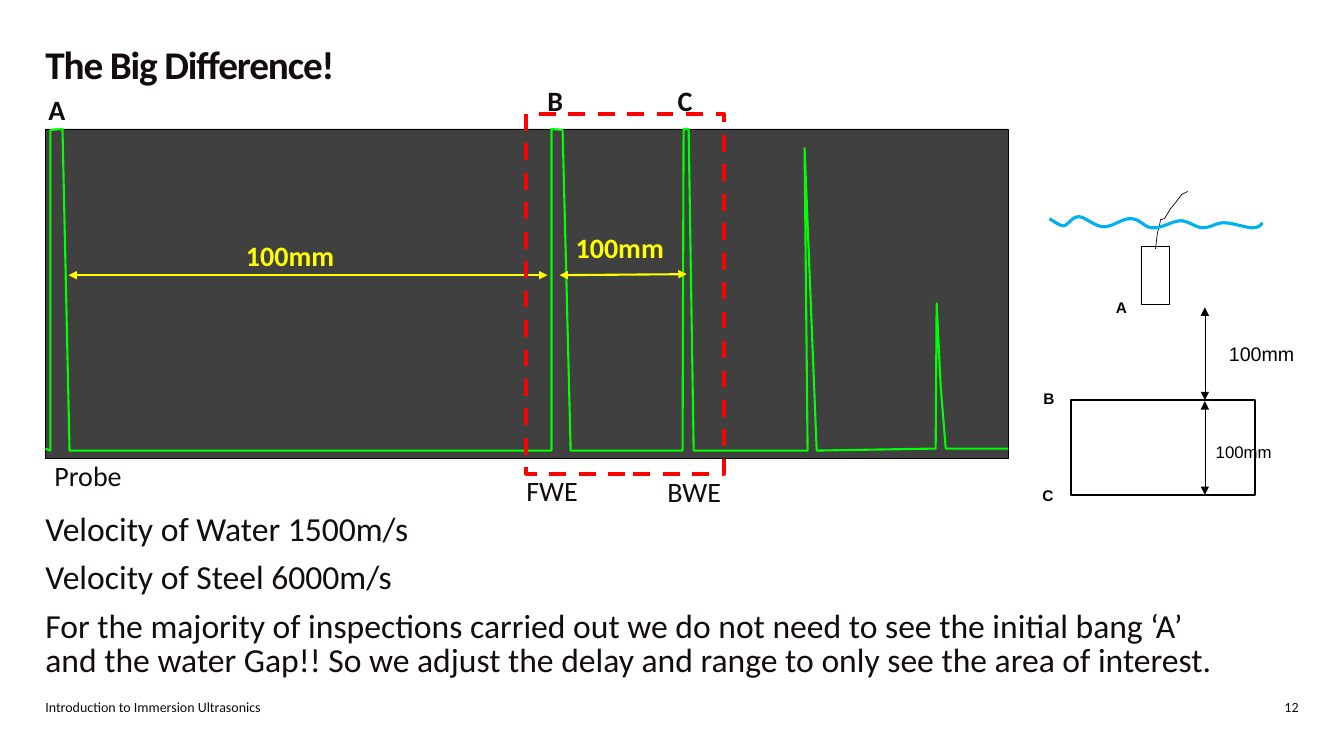
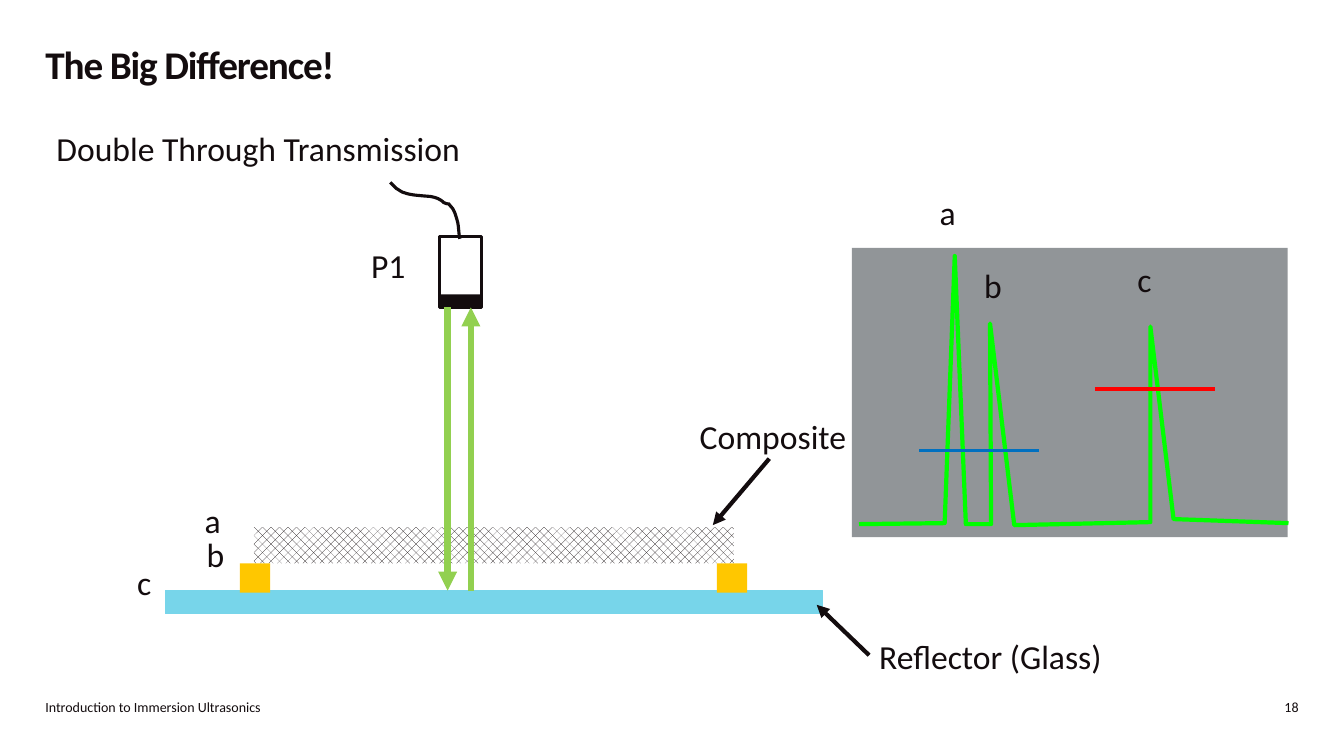
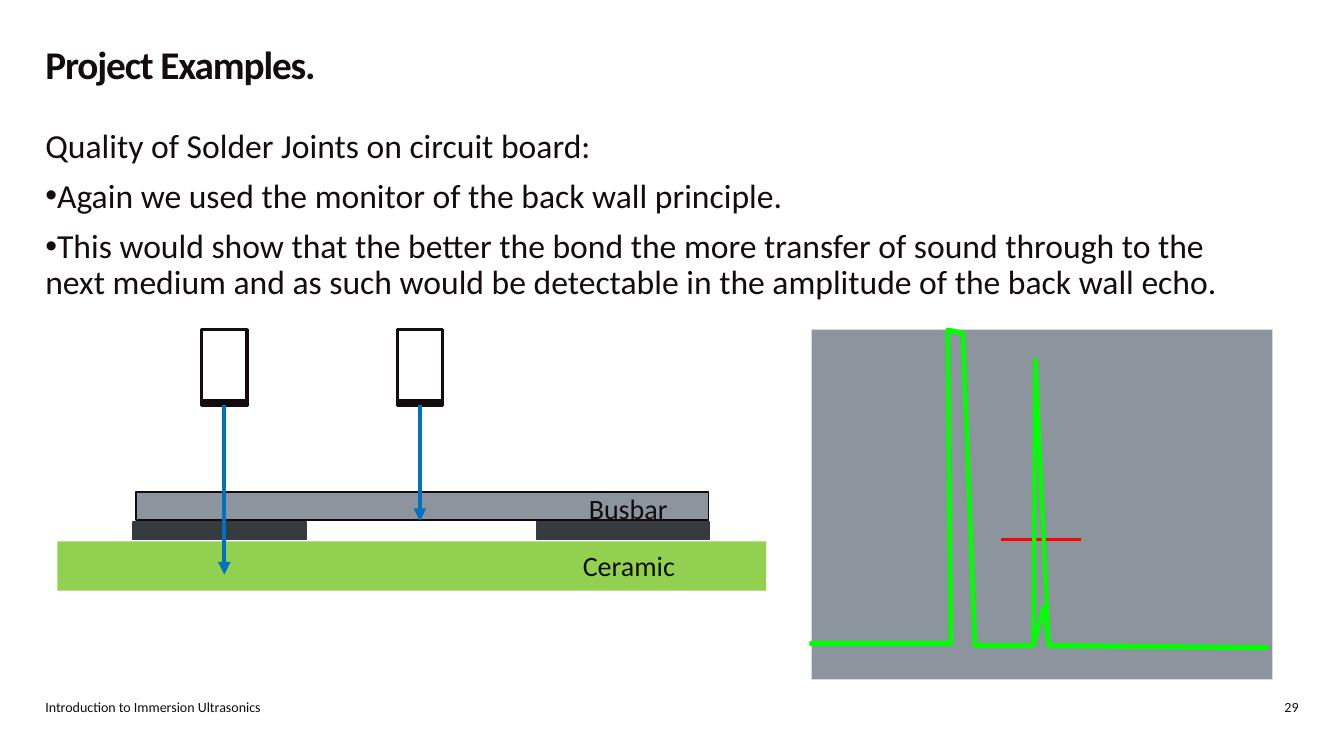
import dataclasses

import pptx
import pptx.dml.color
import pptx.enum.dml
import pptx.enum.shapes
import pptx.enum.text
import pptx.oxml.ns
import pptx.oxml.xmlchemy
import pptx.util

Inches = pptx.util.Inches
Pt = pptx.util.Pt
ALIGN = pptx.enum.text.PP_ALIGN
ANCHOR = pptx.enum.text.MSO_ANCHOR

COLORS = {
    "ink": "130C0E",
    "black": "000000",
    "white": "FFFFFF",
    "screen": "404040",
    "screen_gray": "919598",
    "metal": "8C959D",
    "solder": "353B3F",
    "trace": "00FF00",
    "yellow": "FFFF00",
    "red": "FF0000",
    "blue": "0070C0",
    "water": "00B0F0",
    "glass": "77D5EA",
    "spacer": "FFC700",
    "green": "92D050",
}
FRAME = {"margin_left": 0, "margin_top": 0, "margin_right": 0, "margin_bottom": 0,
         "word_wrap": True, "auto_size": pptx.enum.text.MSO_AUTO_SIZE.NONE,
         "vertical_anchor": ANCHOR.TOP}
TITLE_FONT = {"name": "Calibri", "size": Pt(28), "bold": True}
BODY_FONT = {"name": "Calibri", "size": Pt(24), "bold": False}
LABEL_FONT = {"name": "Calibri", "size": Pt(20), "bold": False}
FOOTER_FONT = {"name": "Calibri", "size": Pt(10), "bold": False}
FOOTER = "Introduction to Immersion Ultrasonics"


def apply(obj, values):
    """Set every attribute in values on obj."""
    for name, value in values.items():
        setattr(obj, name, value)


def rgb(name):
    """Return a named palette colour."""
    return pptx.dml.color.RGBColor.from_string(COLORS[name])


def add_run(p, text, font, color="ink"):
    """Add one formatted run to a paragraph."""
    r = p.add_run()
    r.text = text
    apply(r.font, font)
    r.font.color.rgb = rgb(color)
    return r


def add_child(parent, tag, **attrs):
    """Append a DrawingML element."""
    child = parent.makeelement(pptx.oxml.ns.qn(tag), attrs)
    parent.append(child)


def bezier(start, segments, steps=8):
    """Sample a chain of cubic curves into points."""
    points = [start]
    for c1, c2, end in segments:
        p0 = points[-1]
        for i in range(1, steps + 1):
            t = i / steps
            weights = ((1 - t) ** 3, 3 * t * (1 - t) ** 2, 3 * t * t * (1 - t), t ** 3)
            points.append(tuple(sum(w * q[k] for w, q in zip(weights, (p0, c1, c2, end)))
                                for k in (0, 1)))
    return points


@dataclasses.dataclass
class Region:
    """A part of a slide whose contents are placed from its top left corner."""
    sl: object
    x: float
    y: float

    def at(self, x, y):
        """Convert a local point to slide lengths."""
        return Inches(self.x + x), Inches(self.y + y)

    def sub(self, x, y):
        """Return a region inside this one."""
        return Region(self.sl, self.x + x, self.y + y)

    def finish(self, sp, fill, line, width):
        """Give a shape its fill and outline."""
        sp.shadow.inherit = False
        if fill:
            sp.fill.solid()
            sp.fill.fore_color.rgb = rgb(fill)
        else:
            sp.fill.background()
        if line:
            sp.line.color.rgb = rgb(line)
            sp.line.width = Pt(width)
        else:
            sp.line.fill.background()
        return sp

    def rect(self, x, y, w, h, fill=None, line=None, width=1):
        """Add a rectangle."""
        sp = self.sl.shapes.add_shape(pptx.enum.shapes.MSO_SHAPE.RECTANGLE,
                                      *self.at(x, y), Inches(w), Inches(h))
        return self.finish(sp, fill, line, width)

    def trace(self, points, color, width):
        """Add an open outline through points."""
        start, *rest = [self.at(*point) for point in points]
        fb = self.sl.shapes.build_freeform(*start)
        fb.add_line_segments(rest, close=False)
        return self.finish(fb.convert_to_shape(), None, color, width)

    def line(self, start, end, color, width, ends=()):
        """Add a straight line with triangles at the named ends."""
        cxn = self.sl.shapes.add_connector(pptx.enum.shapes.MSO_CONNECTOR.STRAIGHT,
                                           *self.at(*start), *self.at(*end))
        cxn.line.color.rgb = rgb(color)
        cxn.line.width = Pt(width)
        for tag in ends:
            add_child(cxn.line._get_or_add_ln(), tag, type="triangle")
        add_child(cxn.element.spPr, "a:effectLst")
        return cxn

    def text(self, x, y, w, h, text, font=LABEL_FONT, color="ink",
             frame=FRAME, para=None):
        """Add a one-paragraph text box."""
        tf = self.sl.shapes.add_textbox(*self.at(x, y), Inches(w), Inches(h)).text_frame
        apply(tf, frame)
        apply(tf.paragraphs[0], para or {})
        add_run(tf.paragraphs[0], text, font, color)


ARROW = ("a:tailEnd",)
DOUBLE_ARROW = ("a:headEnd", "a:tailEnd")


def place(sp, x, y, w, h):
    """Move and size a placeholder and reset its text frame."""
    apply(sp, {"left": Inches(x), "top": Inches(y), "width": Inches(w), "height": Inches(h)})
    apply(sp.text_frame, FRAME)


def base_slide(prs, layout, title, number):
    """Add a slide with the shared title, footer and number."""
    sl = prs.slides.add_slide(prs.slide_layouts[layout])
    place(sl.shapes.title, 0.45, 0.49, 11.75, 0.79)
    p = sl.shapes.title.text_frame.paragraphs[0]
    apply(p, {"alignment": ALIGN.LEFT, "line_spacing": 0.8})
    r = add_run(p, title, TITLE_FONT)
    r.font._element.set("spc", "-80")
    page = Region(sl, 0, 0)
    frame = {**FRAME, "vertical_anchor": ANCHOR.MIDDLE}
    page.text(0.45, 6.94, 4.58, 0.15, FOOTER, FOOTER_FONT, frame=frame)
    page.text(12.05, 6.94, 0.83, 0.15, str(number), FOOTER_FONT, frame=frame,
              para={"alignment": ALIGN.RIGHT})
    return page


def body(sl, box, items, spacing):
    """Fill the body placeholder with (text, bulleted) items."""
    sp = sl.placeholders[1]
    place(sp, *box)
    for i, (text, bulleted) in enumerate(items):
        p = sp.text_frame.add_paragraph() if i else sp.text_frame.paragraphs[0]
        pPr = p._p.get_or_add_pPr()
        apply_indent = {"marL": "0", "indent": "0"}
        for name, value in apply_indent.items():
            pPr.set(name, value)
        if bulleted:
            add_child(pPr, "a:buChar", char="•")
        else:
            add_child(pPr, "a:buNone")
        apply(p, {"line_spacing": spacing, "space_before": Pt(10 if i else 0)})
        add_run(p, text, BODY_FONT)


def long_scan(rg):
    """Draw the full time base with its echoes, gaps and labels."""
    rg.rect(0, 0, 9.55, 3.27, "screen", "black", 0.5)
    rg.trace([(0, 3.17), (0.05, 3.19), (0.05, 0.01), (0.17, 0), (0.24, 3.19),
              (5.02, 3.19), (5.02, 0), (5.13, 0.01), (5.21, 3.19), (6.32, 3.19),
              (6.33, 0), (6.38, 0), (6.43, 3.19), (7.56, 3.19), (7.53, 0.19),
              (7.65, 3.19), (8.83, 3.17), (8.84, 1.73), (8.88, 2.56), (8.93, 3.17),
              (9.55, 3.17)], "trace", 1.5)
    for x, y, name in ((0.09, 3.27, "Probe"), (4.77, 3.42, "FWE"), (6.17, 3.43, "BWE")):
        rg.text(x, y, 1.24, 0.35, name)
    bold = {**LABEL_FONT, "bold": True}
    for x, y, name in ((0.03, -0.36, "A"), (4.98, -0.45, "B"), (6.27, -0.45, "C")):
        rg.text(x, y, 0.41, 0.35, name, bold)
    for x, y, start, end in ((1.99, 1.09, (0.23, 1.45), (4.98, 1.45)),
                             (5.26, 1.01, (5.1, 1.45), (6.36, 1.44))):
        rg.text(x, y, 1.24, 0.35, "100mm", bold, "yellow")
        rg.line(start, end, "yellow", 1.5, DOUBLE_ARROW)


def tank(rg):
    """Draw the probe under water above the test block."""
    for top, bottom in ((1.15, 2.07), (2.08, 3.01)):
        rg.line((1.71, top), (1.71, bottom), "black", 0.5, DOUBLE_ARROW)
    rg.rect(0.38, 2.07, 1.83, 0.94, None, "black", 1.5)
    rg.rect(1.08, 0.54, 0.28, 0.58, None, "black", 0.5)
    rg.trace([(1.22, 0.57), (1.24, 0.41), (1.26, 0.34), (1.27, 0.28), (1.31, 0.27),
              (1.37, 0.17), (1.42, 0.11), (1.48, 0.03), (1.54, 0)], "black", 0.5)
    rg.trace(bezier((0.17, 0.27), [
        ((0.22, 0.3), (0.27, 0.34), (0.31, 0.34)),
        ((0.36, 0.33), (0.39, 0.25), (0.46, 0.25)),
        ((0.52, 0.25), (0.62, 0.35), (0.71, 0.35)),
        ((0.8, 0.35), (0.9, 0.26), (0.98, 0.27)),
        ((1.07, 0.27), (1.11, 0.36), (1.19, 0.36)),
        ((1.28, 0.37), (1.39, 0.29), (1.47, 0.29)),
        ((1.55, 0.29), (1.62, 0.36), (1.69, 0.36)),
        ((1.77, 0.36), (1.82, 0.31), (1.9, 0.31)),
        ((1.98, 0.31), (2.12, 0.36), (2.18, 0.36)),
        ((2.24, 0.36), (2.26, 0.34), (2.28, 0.31))]), "water", 2.25)
    frame = {"word_wrap": True}
    for x, y, w, name, size, bold in ((1.85, 1.41, 0.97, "100mm", 14, False),
                                      (1.72, 2.4, 0.97, "100mm", 12, False),
                                      (0.73, 0.98, 0.49, "A", 11, True),
                                      (0.01, 1.88, 0.49, "B", 11, True),
                                      (0, 2.85, 0.49, "C", 11, True)):
        rg.text(x, y, w, 0.4, name, {"name": "Arial", "size": Pt(size), "bold": bold},
                "black", frame, {"line_spacing": 1.15})


def through_setup(rg):
    """Draw the probe, composite, spacers and glass reflector."""
    rg.rect(0.28, 4.05, 6.52, 0.23, "glass", "glass")
    composite = rg.rect(1.16, 3.42, 4.76, 0.36)
    composite.fill.patterned()
    composite.fill.pattern = pptx.enum.dml.MSO_PATTERN.WEAVE
    composite.fill.fore_color.rgb = rgb("ink")
    composite.fill.back_color.rgb = rgb("white")
    for x in (1.02, 5.75):
        rg.rect(x, 3.78, 0.3, 0.29, "spacer")
    rg.rect(3, 0.54, 0.42, 0.7, None, "ink", 2.25)
    rg.trace(bezier((3.2, 0.56), [
        ((3.19, 0.51), (3.19, 0.45), (3.18, 0.4)),
        ((3.17, 0.36), (3.16, 0.33), (3.15, 0.3)),
        ((3.14, 0.28), (3.14, 0.28), (3.13, 0.26)),
        ((3.05, 0.17), (3.13, 0.24), (3.04, 0.2)),
        ((3.03, 0.19), (3.02, 0.18), (3, 0.17)),
        ((2.97, 0.15), (2.91, 0.14), (2.91, 0.14)),
        ((2.8, 0.13), (2.75, 0.13), (2.67, 0.11)),
        ((2.65, 0.1), (2.63, 0.1), (2.62, 0.09)),
        ((2.6, 0.08), (2.59, 0.07), (2.57, 0.06)),
        ((2.55, 0.04), (2.53, 0.02), (2.51, 0))]), "ink", 2.25)
    rg.rect(3, 1.11, 0.42, 0.12, "ink")
    rg.line((3.08, 1.24), (3.08, 4.05), "green", 4.5, ARROW)
    rg.line((3.31, 4.05), (3.31, 1.24), "green", 4.5, ARROW)
    for x, y, w, name in ((2.32, 0.62, 0.55, "P1"), (0.67, 3.15, 0.55, "a"),
                          (0.69, 3.49, 0.55, "b"), (0, 3.76, 0.55, "c"),
                          (5.58, 2.32, 1.58, "Composite"),
                          (7.36, 4.5, 2.32, "Reflector (Glass)")):
        rg.text(x, y, w, 0.4, name, BODY_FONT)
    rg.line((6.27, 2.74), (5.71, 3.4), "ink", 3, ARROW)
    rg.line((7.26, 4.69), (6.74, 4.19), "ink", 3, ARROW)


def gated_scan(rg):
    """Draw the scan with a red and a blue gate."""
    rg.rect(0, 0, 4.32, 2.87, "screen_gray")
    rg.trace([(0.07, 2.74), (0.92, 2.73), (1.02, 0.08), (1.13, 2.74), (1.38, 2.74),
              (1.37, 0.75), (1.61, 2.75), (2.96, 2.72), (2.96, 0.78), (3.19, 2.69),
              (4.33, 2.73)], "trace", 3)
    for x, y, color in ((2.41, 1.4, "red"), (0.67, 2.01, "blue")):
        rg.line((x, y), (x + 1.19, y), color, 2.75)
    for x, y, name in ((0.87, -0.56, "a"), (1.31, 0.17, "b"), (2.83, 0.11, "c")):
        rg.text(x, y, 0.55, 0.4, name, BODY_FONT)


def joint_probe(rg):
    """Draw a probe and return its tip."""
    rg.rect(0, 0, 0.45, 0.74, "white", "ink", 2.25)
    return rg.rect(0, 0.7, 0.45, 0.05, "ink", "ink", 2.25)


def solder_joint(rg):
    """Draw two probes above the busbar, solder and ceramic."""
    for x in (0.75, 4.75):
        rg.rect(x, 1.91, 1.72, 0.17, "solder", "solder")
    probes = [(x, depth, joint_probe(rg.sub(x, 0))) for x, depth in ((1.43, 2.43), (3.37, 1.9))]
    rg.rect(0.78, 1.61, 5.68, 0.28, "metal", "ink")
    rg.text(5.27, 1.61, 0.86, 0.34, "Busbar")
    rg.rect(0, 2.1, 7.03, 0.49, "green")
    rg.text(5.21, 2.17, 1.42, 0.34, "Ceramic")
    for x, depth, tip in probes:
        middle = x + 0.225
        beam = rg.line((middle, 0.75), (middle, depth), "blue", 3, ARROW)
        beam.begin_connect(tip, 2)


def back_wall_scan(rg):
    """Draw the weak and the strong back wall echo with their gate."""
    rg.rect(0.02, 0, 4.57, 3.47, "metal")
    for y, peak in ((0.01, (2.32, 2.74)), (0, (2.24, 0.3))):
        rg.trace([(0, y + 3.11), (1.4, y + 3.11), (1.37, y), (1.52, y + 0.03),
                  (1.64, y + 3.13), (2.22, y + 3.13), (peak[0], y + peak[1]),
                  (2.37, y + 3.13), (4.55, y + 3.15)], "trace", 3)
        if y:
            rg.line((1.9, 2.08), (2.69, 2.08), "red", 2.25)


def main():
    """Build the three slides."""
    prs = pptx.Presentation()
    apply(prs, {"slide_width": Inches(13.33), "slide_height": Inches(7.5)})

    page = base_slide(prs, 1, "The Big Difference!", 12)
    body(page.sl, (0.45, 5.1, 11.75, 1.4), [
        ("Velocity of Water 1500m/s", False),
        ("Velocity of Steel 6000m/s", False),
        ("For the majority of inspections carried out we do not need to see the initial "
         "bang ‘A’ and the water Gap!! So we adjust the delay and range to only see the "
         "area of interest.", False)], 0.85)
    long_scan(page.sub(0.45, 1.28))
    tank(page.sub(10.24, 1.9))
    interest = page.rect(5.22, 1.13, 1.96, 3.57, None, "red", 3)
    interest.line.dash_style = pptx.enum.dml.MSO_LINE.DASH

    page = base_slide(prs, 5, "The Big Difference!", 18)
    page.text(0.56, 1.27, 4.46, 0.4, "Double Through Transmission", BODY_FONT)
    gated_scan(page.sub(8.45, 2.46))
    through_setup(page.sub(1.36, 1.81))

    page = base_slide(prs, 1, "Project Examples.", 29)
    body(page.sl, (0.45, 1.28, 11.87, 1.9), [
        ("Quality of Solder Joints on circuit board:", False),
        ("Again we used the monitor of the back wall principle.", True),
        ("This would show that the better the bond the more transfer of sound through to "
         "the next medium and as such would be detectable in the amplitude of the back "
         "wall echo.", True)], 0.9)
    solder_joint(page.sub(0.57, 3.27))
    back_wall_scan(page.sub(8.03, 3.27))

    prs.save("out.pptx")


if __name__ == "__main__":
    main()
